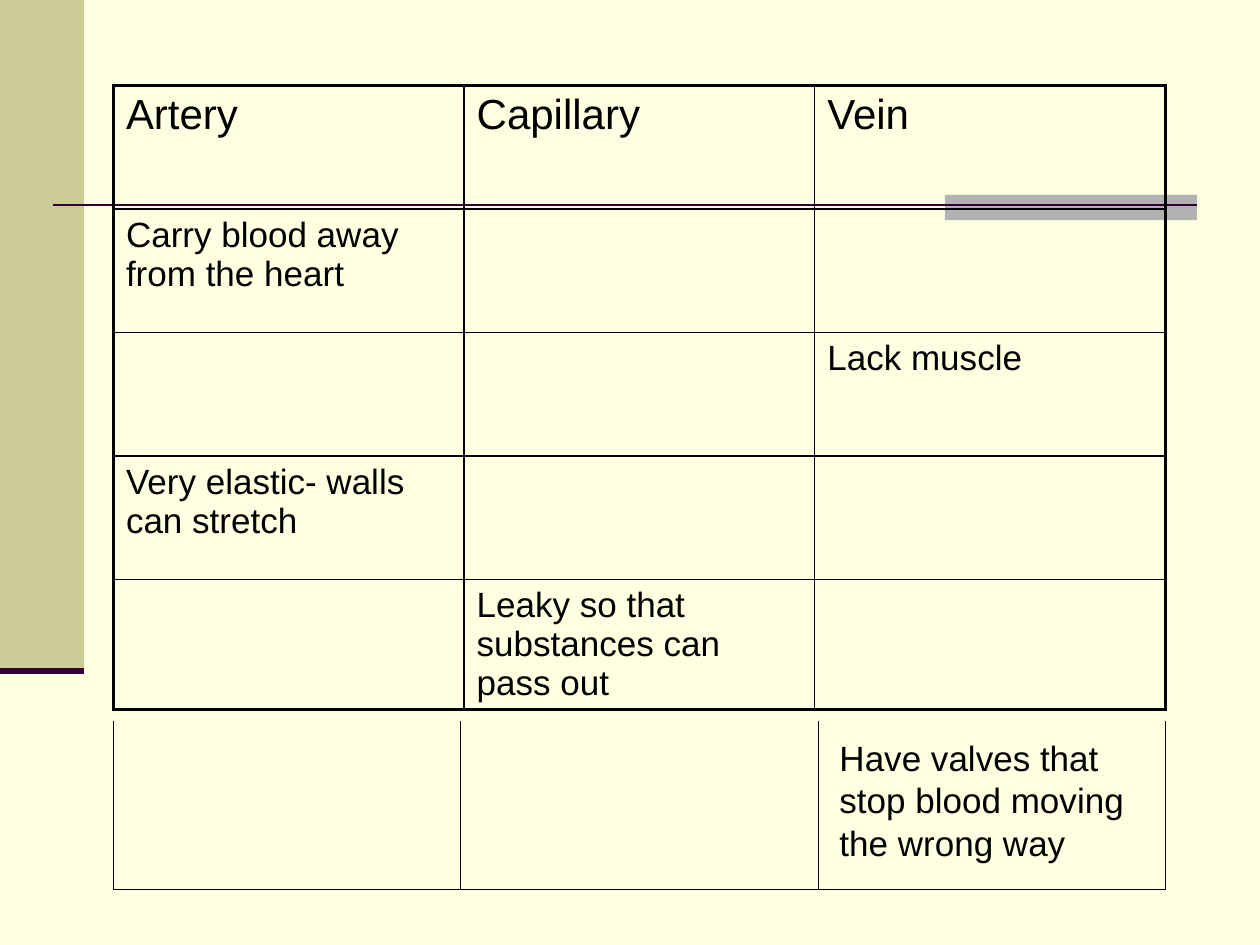
from lxml import etree
from pptx import Presentation
from pptx.dml.color import RGBColor
from pptx.enum.shapes import MSO_CONNECTOR, MSO_SHAPE
from pptx.oxml.ns import qn
from pptx.util import Inches, Pt

RECTANGLE = MSO_SHAPE.RECTANGLE
STRAIGHT = MSO_CONNECTOR.STRAIGHT
BLACK, PLUM = "000000", "330033"
THIN, THICK = 1, 2.25
NO_STYLE = "{2D5ABB26-0587-4C30-8999-92F81FD0307C}"
ROWS = [
    ["Artery", "Capillary", "Vein"],
    ["Carry blood away from the heart", "", ""],
    ["", "", "Lack muscle"],
    ["Very elastic- walls can stretch", "", ""],
    ["", "Leaky so that substances can pass out", ""],
]


def color(value):
    return RGBColor.from_string(value)


def write(frame, text, size=20, before=0):
    para = frame.paragraphs[0]
    para.space_before = Pt(before)
    span = para.add_run()
    span.text = text
    span.font.size = Pt(size)
    span.font.name = "Arial"
    span.font.color.rgb = color(BLACK)


def add_block(page, box, fill):
    block = page.shapes.add_shape(RECTANGLE, *map(Inches, box))
    block.shadow.inherit = False
    block.fill.solid()
    block.fill.fore_color.rgb = color(fill)
    block.line.fill.background()


def add_line(page, start, end, line_color=BLACK, width=0.75):
    line = page.shapes.add_connector(STRAIGHT, *map(Inches, start + end))
    line.line.color.rgb = color(line_color)
    line.line.width = Pt(width)
    etree.SubElement(line._element.spPr, qn("a:effectLst"))


def add_decoration(page, width, height):
    side_width, side_height = width / 15, height * 0.71
    rule_y = height * 0.217
    add_block(page, (0, 0, side_width, side_height), "CCCC99")
    add_block(page, (width * 0.75, rule_y - 0.08, width * 0.2, 0.2), "B2B2B2")
    add_line(page, (width * 0.042, rule_y), (width * 0.95, rule_y), PLUM, 1.5)
    add_line(page, (0, side_height), (side_width, side_height), PLUM, 3.5)


def set_borders(cell, widths):
    """Draw the left, right, top and bottom borders, in that order."""
    properties = cell._tc.get_or_add_tcPr()
    for index, (side, width) in enumerate(zip("LRTB", widths)):
        border = etree.Element(qn(f"a:ln{side}"), w=str(Pt(width)))
        fill = etree.SubElement(border, qn("a:solidFill"))
        etree.SubElement(fill, qn("a:srgbClr"), val=BLACK)
        properties.insert(index, border)


def add_vessel_table(page, left, top, width, row_height):
    row_count, column_count = len(ROWS), len(ROWS[0])
    frame = page.shapes.add_table(
        row_count, column_count, Inches(left), Inches(top),
        Inches(width), Inches(row_height * row_count))
    table = frame.table
    table.first_row = table.horz_banding = False
    table._tbl.tblPr.find(qn("a:tableStyleId")).text = NO_STYLE
    for row, texts in enumerate(ROWS):
        for column, text in enumerate(texts):
            cell = table.cell(row, column)
            cell.fill.background()
            edges = (column == 0, column == column_count - 1,
                     row == 0, row == row_count - 1)
            set_borders(cell, [THICK if edge else THIN for edge in edges])
            if text:
                write(cell.text_frame, text, size=20 if row else 24)


def add_extra_row(page, left, top, width, height):
    """Add the open-topped row below the table."""
    right, bottom = left + width, top + height
    dividers = [left, left + width * 0.33, left + width * 0.67, right]
    for x in dividers:
        add_line(page, (x, top), (x, bottom))
    add_line(page, (left, bottom), (right, bottom))
    note = page.shapes.add_textbox(
        Inches(dividers[2] + 0.07), Inches(top + 0.08), Inches(2.6), Inches(1.1))
    note.text_frame.word_wrap = True
    write(note.text_frame, "Have valves that stop blood moving the wrong way")


def main():
    deck = Presentation()
    width, height = 10, 7.5
    deck.slide_width, deck.slide_height = Inches(width), Inches(height)
    page = deck.slides.add_slide(deck.slide_layouts[6])
    page.background.fill.solid()
    page.background.fill.fore_color.rgb = color("FFFFE1")
    add_decoration(page, width, height)
    left, content_width = 0.9, 8.35
    add_vessel_table(page, left, 0.68, content_width, 0.98)
    add_extra_row(page, left, 5.72, content_width, 1.34)
    deck.save("out.pptx")


if __name__ == "__main__":
    main()
